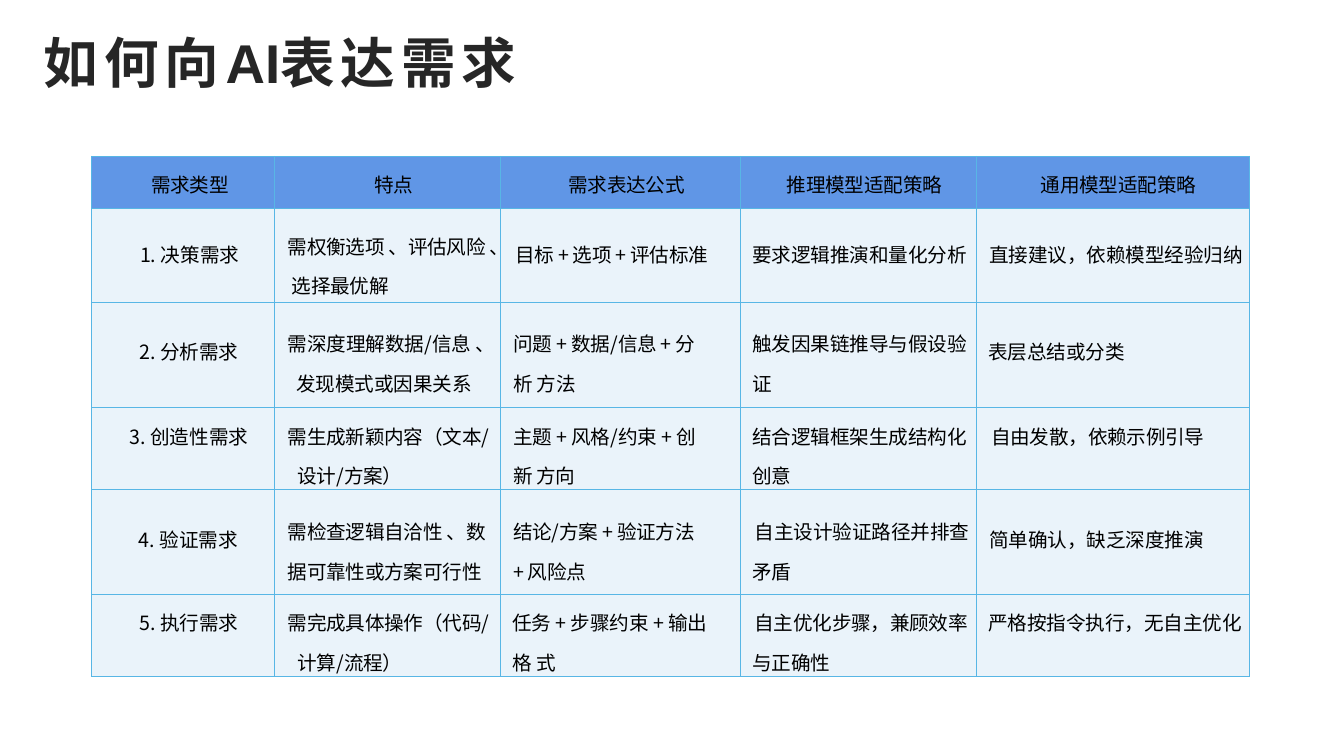
"""Build a slide that tabulates how to phrase each kind of request to an AI."""
from dataclasses import dataclass

from pptx import Presentation
from pptx.dml.color import RGBColor
from pptx.enum import text as t
from pptx.oxml import xmlchemy as x
from pptx.util import Length, Pt


@dataclass(frozen=True)
class Theme:
    header: str = "6096E6"
    body: str = "EAF3FA"
    border: str = "58B6E5"
    ink: str = "000000"
    title_ink: str = "262626"
    cjk: str = "Noto Sans CJK SC"
    latin: str = "Arial"
    title_size: float = 39
    cell_size: float = 14


@dataclass(frozen=True)
class Entry:
    text: str
    indent: float = 9
    tracking: float = -0.2
    hang: float = 0
    wraps: bool = False


@dataclass(frozen=True)
class Band:
    height: float
    single_top: float
    double_top: float
    entries: tuple[Entry, ...]
    fill: str


THEME = Theme()
COLUMNS = (130.5, 161.5, 171.5, 168.5, 195)
BANDS = (
    Band(37, 9.4, 0, (
        Entry("需求类型", 42.5),
        Entry("特点", 71.5),
        Entry("需求表达公式", 48.5),
        Entry("推理模型适配策略", 33),
        Entry("通用模型适配策略", 46),
    ), THEME.header),
    Band(67.5, 22.6, 9, (
        Entry("1. 决策需求", 34.5, 0),
        Entry("需权衡选项 、评估风险 、选择最优解", 9.5, -0.2, 3, True),
        Entry("目标 + 选项 + 评估标准", 10.5, -0.3),
        Entry("要求逻辑推演和量化分析", 8.5, -0.1),
        Entry("直接建议，依赖模型经验归纳", tracking=-0.1),
    ), THEME.body),
    Band(75, 24.2, 11, (
        Entry("2. 分析需求", 34, 0),
        Entry("需深度理解数据/信息 、发现模式或因果关系", 9.5, -0.1, 6, True),
        Entry("问题 + 数据/信息 + 分\v析 方法", 9.5, -0.3),
        Entry("触发因果链推导与假设验\v证", 8.5, -0.1),
        Entry("表层总结或分类", 8.5, -0.1),
    ), THEME.body),
    Band(58.5, 9.8, 2, (
        Entry("3. 创造性需求", 27, 0),
        Entry("需生成新颖内容（文本/\v设计/方案）", 9.5, hang=7),
        Entry("主题 + 风格/约束 + 创\v新 方向", tracking=-0.2),
        Entry("结合逻辑框架生成结构化\v创意", 8.5, -0.1),
        Entry("自由发散，依赖示例引导", 10.5),
    ), THEME.body),
    Band(75, 25, 11.7, (
        Entry("4. 验证需求", 33.5, 0),
        Entry("需检查逻辑自洽性 、数\v据可靠性或方案可行性", 9.5),
        Entry("结论/方案 + 验证方法\v+ 风险点", tracking=-0.3),
        Entry("自主设计验证路径并排查\v矛盾", 10, -0.1, -1.5),
        Entry("简单确认，缺乏深度推演", tracking=-0.1),
    ), THEME.body),
    Band(58.5, 9.5, 1.8, (
        Entry("5. 执行需求", 34, 0),
        Entry("需完成具体操作（代码/\v计算/流程）", 9.5, hang=7),
        Entry("任务 + 步骤约束 + 输出\v格 式", 8.5, -0.1),
        Entry("自主优化步骤，兼顾效率\v与正确性", 10, -0.2, -1.5),
        Entry("严格按指令执行，无自主优化", 8.5, -0.1),
    ), THEME.body),
)


def write(para, content: str, *, size: float, color: str, font: str = THEME.cjk,
          bold: bool = False, tracking: float = 0) -> None:
    """Append formatted text, turning vertical tabs into line breaks."""
    for index, line in enumerate(content.split("\v")):
        if index:
            para.add_line_break()
        span = para.add_run()
        span.text = line
        span.font.size, span.font.bold, span.font.name = Pt(size), bold, font
        span.font.color.rgb = RGBColor.from_string(color)
        properties = span.font._element
        properties.set("spc", str(round(tracking * 100)))
        east = x.OxmlElement("a:ea")
        east.set("typeface", THEME.cjk)
        properties.find(x.qn("a:latin")).addnext(east)


def border_cell(cell) -> None:
    """Draw the four thin borders of a cell."""
    properties = cell._tc.get_or_add_tcPr()
    for index, side in enumerate(("lnL", "lnR", "lnT", "lnB")):
        line = x.OxmlElement(f"a:{side}")
        line.set("w", str(Pt(1)))
        fill = x.OxmlElement("a:solidFill")
        color = x.OxmlElement("a:srgbClr")
        color.set("val", THEME.border)
        fill.append(color)
        line.append(fill)
        properties.insert(index, line)


def fill_cell(cell, entry: Entry, band: Band) -> None:
    """Format one cell and write its entry."""
    double = entry.wraps or "\v" in entry.text
    cell.margin_left = cell.margin_right = cell.margin_bottom = Pt(0)
    cell.margin_top = Pt(band.double_top if double else band.single_top)
    cell.vertical_anchor = t.MSO_ANCHOR.TOP
    cell.fill.solid()
    cell.fill.fore_color.rgb = RGBColor.from_string(band.fill)
    border_cell(cell)
    para = cell.text_frame.paragraphs[0]
    para.line_spacing = 1.38 if double else 1.0
    properties = para._p.get_or_add_pPr()
    properties.set("marL", str(Pt(entry.indent + entry.hang)))
    properties.set("indent", str(Pt(-entry.hang)))
    write(para, entry.text, size=THEME.cell_size, color=THEME.ink,
          tracking=entry.tracking)


def add_title(page) -> None:
    """Place the mixed-script heading."""
    box = page.shapes.add_textbox(Pt(31.2), Pt(26.5), Pt(345), Pt(43))
    frame = box.text_frame
    frame.word_wrap = True
    frame.margin_left = frame.margin_right = frame.margin_top = frame.margin_bottom = Pt(0)
    para = frame.paragraphs[0]
    para.line_spacing = Pt(41)
    for content, font, tracking in (
        ("如何向", THEME.cjk, 4.3), ("AI", THEME.latin, 0), ("表达需求", THEME.cjk, 4.3),
    ):
        write(para, content, size=THEME.title_size, color=THEME.title_ink,
              font=font, bold=True, tracking=tracking)


def add_request_table(page) -> None:
    """Place the table of request types."""
    widths: list[Length] = [Pt(width) for width in COLUMNS]
    height = Pt(sum(band.height for band in BANDS))
    table = page.shapes.add_table(len(BANDS), len(COLUMNS), Pt(65.5), Pt(111.8),
                                  sum(widths), height).table
    table.horz_banding = False
    for column, width in zip(table.columns, widths):
        column.width = width
    for row, band in zip(table.rows, BANDS):
        row.height = Pt(band.height)
        for cell, entry in zip(row.cells, band.entries):
            fill_cell(cell, entry, band)


def main() -> None:
    """Create and save the deck."""
    deck = Presentation()
    deck.slide_width, deck.slide_height = Pt(960), Pt(540)
    page = deck.slides.add_slide(deck.slide_layouts[6])
    add_request_table(page)
    add_title(page)
    deck.save("out.pptx")


if __name__ == "__main__":
    main()
